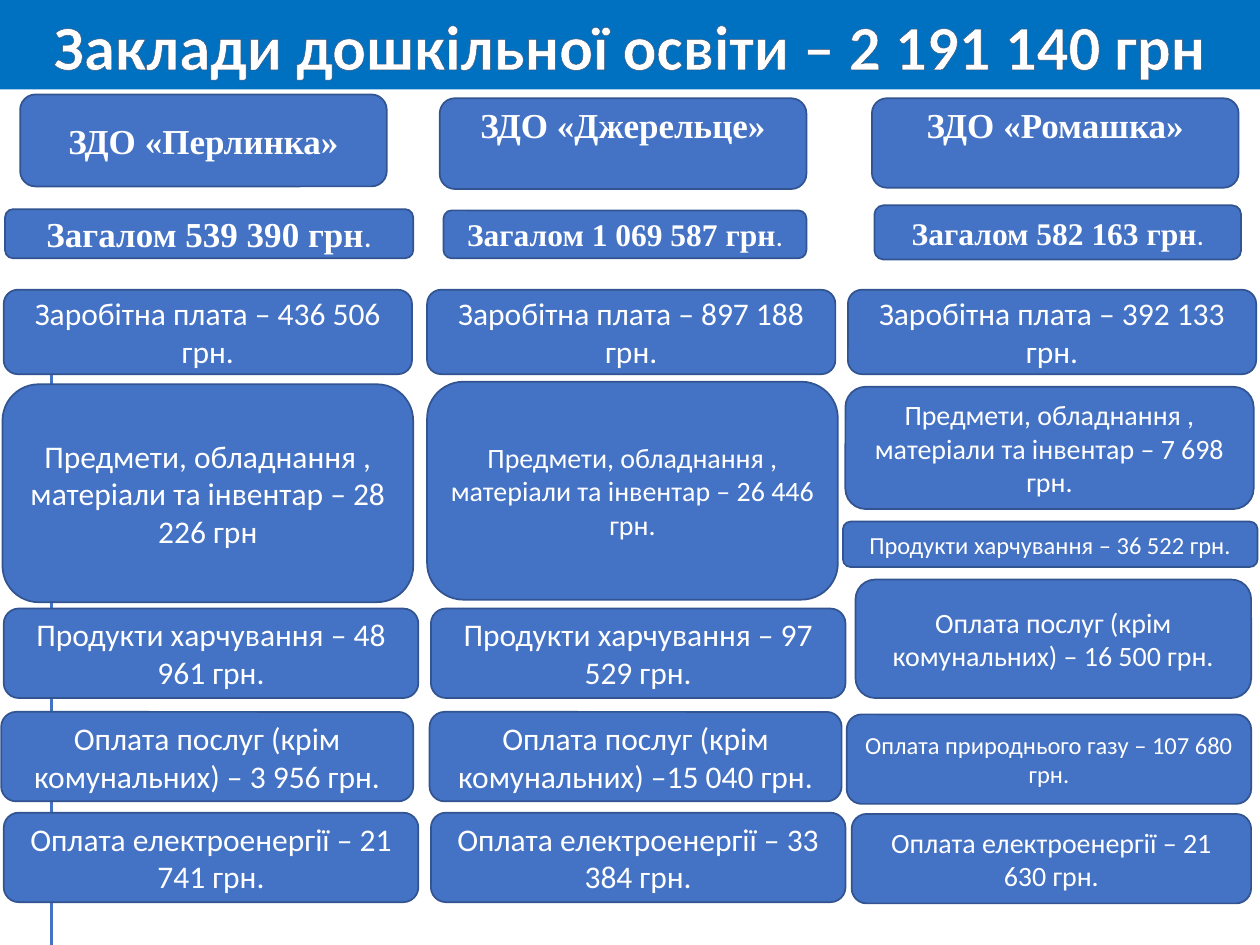
from dataclasses import dataclass

from lxml import etree
from pptx import Presentation
from pptx.dml.color import RGBColor
from pptx.enum.shapes import MSO_CONNECTOR, MSO_SHAPE
from pptx.enum.text import MSO_ANCHOR, PP_ALIGN
from pptx.oxml.ns import qn
from pptx.util import Inches, Pt

RECT = MSO_SHAPE.RECTANGLE
ROUNDED = MSO_SHAPE.ROUNDED_RECTANGLE
STRAIGHT = MSO_CONNECTOR.STRAIGHT
TOP, MIDDLE = MSO_ANCHOR.TOP, MSO_ANCHOR.MIDDLE
CENTER = PP_ALIGN.CENTER

COLORS = {
    "banner": "0070C0",
    "box": "4472C4",
    "border": "325491",
    "text": "FFFFFF",
    "text_outline": "3A5274",
}
SANS, SERIF = "Calibri", "Times New Roman"


@dataclass
class Label:
    text: str
    size: int
    font: str = SANS
    bold: bool = False


@dataclass
class Box:
    left: float
    top: float
    width: float
    height: float
    labels: list[Label]
    anchor: MSO_ANCHOR = MIDDLE


def color(name: str) -> RGBColor:
    return RGBColor.from_string(COLORS[name])


def name_box(left: float, top: float, height: float, name: str,
             anchor: MSO_ANCHOR = TOP) -> Box:
    return Box(left, top, 2.91, height, [Label(f"ЗДО «{name}»", 20, SERIF, True)], anchor)


def total_box(left: float, top: float, width: float, height: float,
              amount: str, size: int) -> Box:
    labels = [Label(f"Загалом {amount} грн", size, SERIF, True), Label(".", size - 2)]
    return Box(left, top, width, height, labels)


def item_box(left: float, top: float, width: float, height: float,
             text: str, size: int = 18) -> Box:
    return Box(left, top, width, height, [Label(text, size)])


def add_box(slide, box: Box, shape_type=ROUNDED, fill: str = "box", border: str = "border"):
    s = slide.shapes.add_shape(shape_type, Inches(box.left), Inches(box.top),
                               Inches(box.width), Inches(box.height))
    s.shadow.inherit = False
    s.fill.solid()
    s.fill.fore_color.rgb = color(fill)
    if border:
        s.line.color.rgb = color(border)
        s.line.width = Pt(1)
    else:
        s.line.fill.background()
    tf = s.text_frame
    tf.word_wrap = True
    tf.vertical_anchor = box.anchor
    if box.anchor == TOP:
        tf.margin_top = Inches(0.01)
    p = tf.paragraphs[0]
    p.alignment = CENTER
    for label in box.labels:
        r = p.add_run()
        r.text = label.text
        r.font.name = label.font
        r.font.size = Pt(label.size)
        r.font.bold = label.bold
        r.font.color.rgb = color("text")
    return s


def outline_text(run, name: str, width: float) -> None:
    ln = etree.Element(qn("a:ln"), w=str(Pt(width)))
    fill = etree.SubElement(ln, qn("a:solidFill"))
    etree.SubElement(fill, qn("a:srgbClr"), val=COLORS[name])
    run.font._element.insert(0, ln)


def add_side_line(slide) -> None:
    line = slide.shapes.add_connector(STRAIGHT, Inches(0.41), Inches(2.33),
                                      Inches(0.41), Inches(7.5))
    line.line.color.rgb = color("box")
    line.line.width = Pt(1.5)
    etree.SubElement(line._element.spPr, qn("a:effectLst"))


SALARY = "Заробітна плата –"
SUPPLIES = "Предмети, обладнання , матеріали та інвентар –"
FOOD = "Продукти харчування –"
SERVICES = "Оплата послуг (крім комунальних) –"
POWER = "Оплата електроенергії –"
GAS = "Оплата природнього газу –"

HEADERS = [
    name_box(0.16, 0.75, 0.73, "Перлинка", MIDDLE),
    name_box(3.49, 0.78, 0.72, "Джерельце"),
    name_box(6.92, 0.78, 0.71, "Ромашка"),
    total_box(0.04, 1.66, 3.24, 0.39, "539 390", 20),
    total_box(3.52, 1.67, 2.88, 0.38, "1 069 587", 18),
    total_box(6.94, 1.63, 2.91, 0.43, "582 163", 18),
]

EXPENSES = [
    item_box(0.03, 2.3, 3.24, 0.67, f"{SALARY} 436 506 грн."),
    item_box(0.02, 3.05, 3.26, 1.73, f"{SUPPLIES} 28 226 грн"),
    item_box(0.03, 4.83, 3.29, 0.71, f"{FOOD} 48 961 грн."),
    item_box(0.01, 5.65, 3.27, 0.71, f"{SERVICES} 3 956 грн."),
    item_box(0.03, 6.45, 3.29, 0.71, f"{POWER} 21 741 грн."),

    item_box(3.39, 2.3, 3.24, 0.67, f"{SALARY} 897 188 грн."),
    item_box(3.39, 3.03, 3.26, 1.73, f"{SUPPLIES} 26 446 грн.", 16),
    item_box(3.42, 4.83, 3.29, 0.71, f"{FOOD} 97 529 грн."),
    item_box(3.41, 5.65, 3.27, 0.71, f"{SERVICES}15 040 грн."),
    item_box(3.42, 6.45, 3.29, 0.71, f"{POWER} 33 384 грн."),

    item_box(6.73, 2.3, 3.24, 0.67, f"{SALARY} 392 133 грн."),
    item_box(6.71, 3.07, 3.24, 0.97, f"{SUPPLIES} 7 698 грн.", 16),
    item_box(6.69, 4.14, 3.29, 0.36, f"{FOOD} 36 522 грн.", 14),
    item_box(6.79, 4.6, 3.14, 0.94, f"{SERVICES} 16 500 грн.", 16),
    item_box(6.72, 5.67, 3.21, 0.71, f"{GAS} 107 680 грн.", 14),
    item_box(6.76, 6.46, 3.17, 0.71, f"{POWER} 21 630 грн.", 16),
]


def main() -> None:
    prs = Presentation()
    prs.slide_width, prs.slide_height = Inches(10), Inches(7.5)
    slide = prs.slides.add_slide(prs.slide_layouts[6])

    title = Label("Заклади дошкільної освіти – 2 191 140 грн", 36, bold=True)
    banner = add_box(slide, Box(0, 0, 10, 0.71, [title]), RECT, "banner", "")
    outline_text(banner.text_frame.paragraphs[0].runs[0], "text_outline", 1)

    for box in HEADERS:
        add_box(slide, box)
    add_side_line(slide)
    for box in EXPENSES:
        add_box(slide, box)

    prs.save("out.pptx")


if __name__ == "__main__":
    main()
